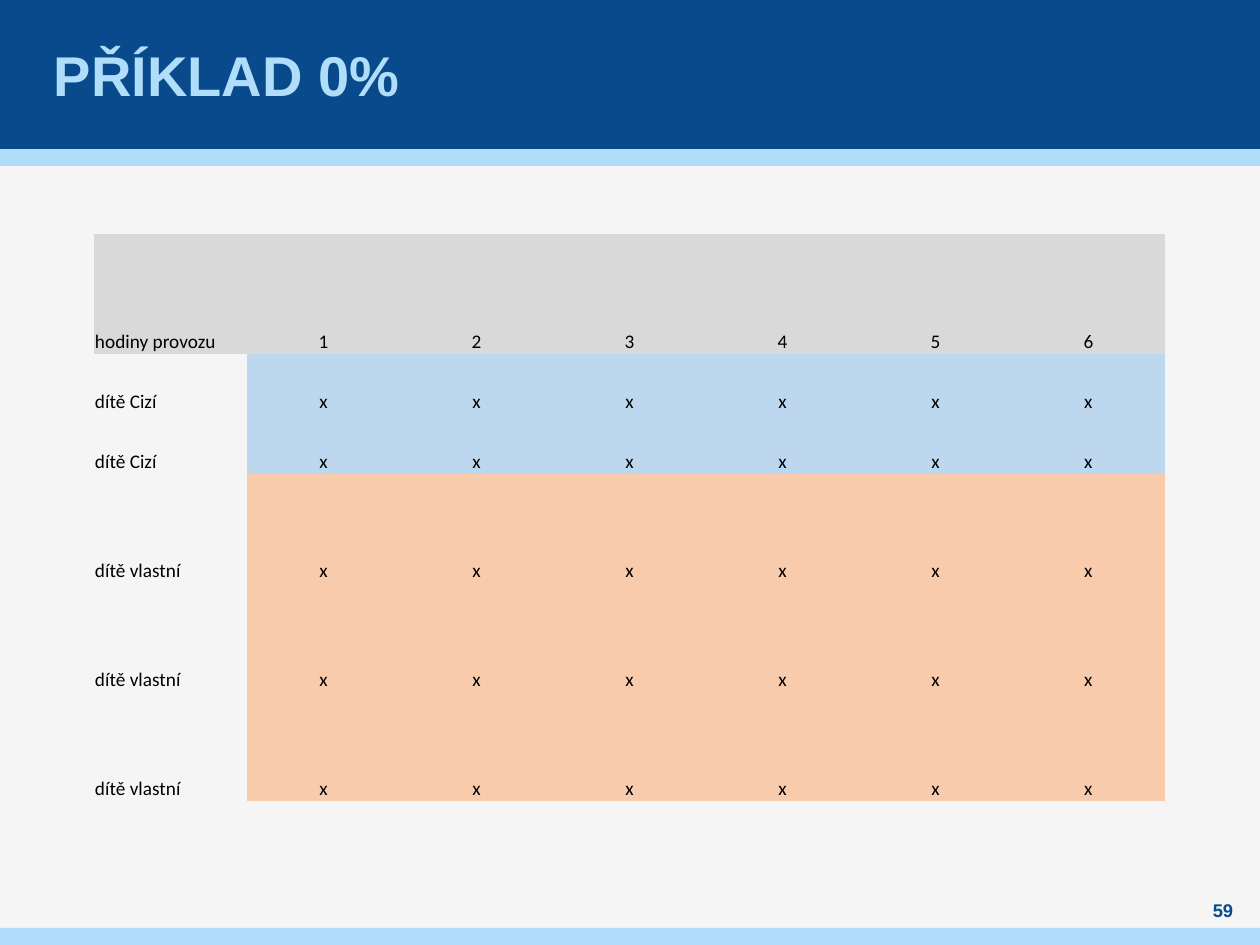
from dataclasses import dataclass
from typing import Any

from pptx import Presentation
from pptx.dml.color import RGBColor
from pptx.enum.shapes import MSO_SHAPE
from pptx.enum.text import MSO_ANCHOR, PP_ALIGN
from pptx.util import Emu, Pt

RECT = MSO_SHAPE.RECTANGLE
MIDDLE, BOTTOM = MSO_ANCHOR.MIDDLE, MSO_ANCHOR.BOTTOM
LEFT, CENTER = PP_ALIGN.LEFT, PP_ALIGN.CENTER
SCALE = 914400 / 126
NAVY, SKY, PAPER, BLACK = "084A8B", "AFDDFA", "F5F5F5", "000000"
GRAY, BLUE, PEACH = "D9D9D9", "BDD7EE", "F8CBAD"
PLAIN = "{2D5ABB26-0587-4C30-8999-92F81FD0307C}"
HOURS = 6
COL = 153


@dataclass
class Band:
    top: int
    high: int
    color: str


@dataclass
class Label:
    text: str
    box: tuple[int, int, int, int]
    inset: int
    align: Any
    size: float
    color: str


@dataclass
class Row:
    name: str
    marks: list[str]
    high: int
    color: str
    head: bool = False


BANDS = [Band(149, 17, SKY), Band(0, 149, NAVY), Band(928, 17, SKY)]
LABELS = [
    Label("PŘÍKLAD 0%", (49, 0, 1160, 149), 5, LEFT, 32, SKY),
    Label("59", (1191, 898, 64, 25), 0, CENTER, 10.5, NAVY),
]
CROSS = ["x"] * HOURS
ROWS = [
    Row("hodiny provozu", [str(n + 1) for n in range(HOURS)], 120, GRAY, True),
    *[Row("dítě Cizí", CROSS, 60, BLUE) for _ in range(2)],
    *[Row("dítě vlastní", CROSS, 109, PEACH) for _ in range(3)],
]


def px(n: int) -> Emu:
    return Emu(round(n * SCALE))


def rgb(color: str) -> RGBColor:
    return RGBColor.from_string(color)


def apply(item: Any, form: dict[str, Any]) -> None:
    for key, value in form.items():
        setattr(item, key, value)


def paint(fill: Any, color: str) -> None:
    fill.solid()
    fill.fore_color.rgb = rgb(color)


def write(frame: Any, text: str, align: Any, color: str, form: dict[str, Any]) -> None:
    para = frame.paragraphs[0]
    para.alignment = align
    run = para.add_run()
    run.text = text
    apply(run.font, form)
    run.font.color.rgb = rgb(color)


def draw_band(slide: Any, band: Band) -> None:
    shape = slide.shapes.add_shape(RECT, 0, px(band.top), px(1260), px(band.high))
    shape.shadow.inherit = False
    paint(shape.fill, band.color)
    shape.line.fill.background()


def draw_label(slide: Any, label: Label) -> None:
    frame = slide.shapes.add_textbox(*map(px, label.box)).text_frame
    side = px(label.inset)
    apply(frame, {"word_wrap": True, "vertical_anchor": MIDDLE,
                  "margin_left": side, "margin_right": side,
                  "margin_top": 0, "margin_bottom": 0})
    write(frame, label.text, label.align, label.color,
          {"name": "Arial", "size": Pt(label.size), "bold": True})


def draw_table(slide: Any, rows: list[Row]) -> None:
    cols = HOURS + 1
    high = sum(row.high for row in rows)
    frame = slide.shapes.add_table(len(rows), cols, px(94), px(234), px(COL * cols), px(high))
    table = frame.table
    apply(table, {"first_row": False, "horz_banding": False})
    table._tbl.tblPr[0].text = PLAIN
    for col in table.columns:
        col.width = px(COL)
    for line, row in zip(table.rows, rows):
        line.height = px(row.high)
        for n, (cell, text) in enumerate(zip(line.cells, [row.name, *row.marks])):
            apply(cell, {"vertical_anchor": BOTTOM, "margin_left": px(1),
                         "margin_right": px(1), "margin_top": px(1), "margin_bottom": 0})
            if n or row.head:
                paint(cell.fill, row.color)
            else:
                cell.fill.background()
            write(cell.text_frame, text, CENTER if n else LEFT, BLACK,
                  {"name": "Calibri", "size": Pt(11), "bold": False})


def main() -> None:
    deck = Presentation()
    apply(deck, {"slide_width": px(1260), "slide_height": px(945)})
    slide = deck.slides.add_slide(deck.slide_layouts[6])
    paint(slide.background.fill, PAPER)
    for band in BANDS:
        draw_band(slide, band)
    for label in LABELS:
        draw_label(slide, label)
    draw_table(slide, ROWS)
    deck.save("out.pptx")


if __name__ == "__main__":
    main()
